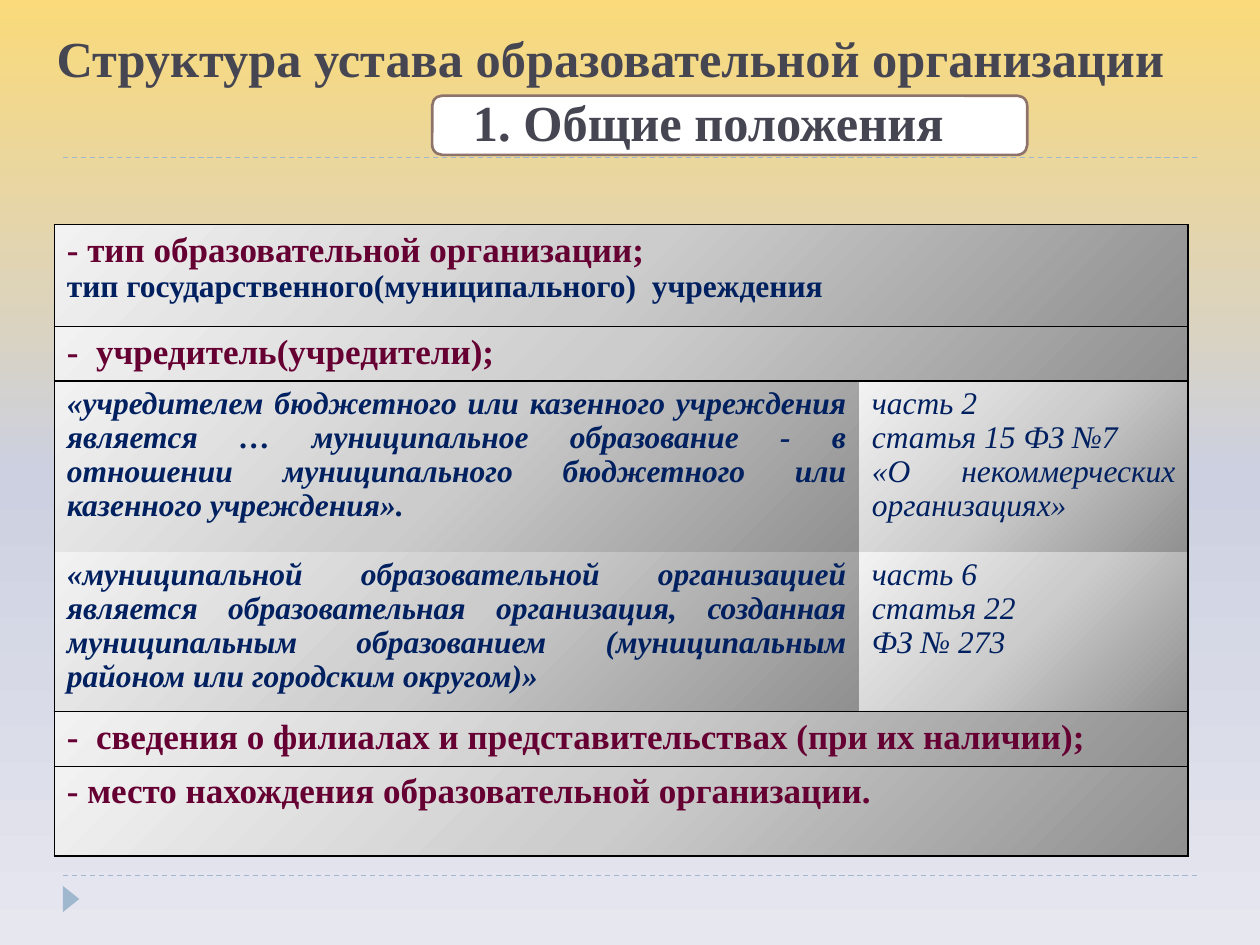
from dataclasses import dataclass

import lxml.etree
import pptx
import pptx.dml.color
import pptx.enum.dml
import pptx.enum.shapes
import pptx.enum.text
import pptx.oxml.ns
import pptx.util

Pt = pptx.util.Pt
qn = pptx.oxml.ns.qn
SHAPE = pptx.enum.shapes.MSO_SHAPE
ALIGN = pptx.enum.text.PP_ALIGN


@dataclass(frozen=True)
class Theme:
    font: str = "Times New Roman"
    title: str = "464653"
    item: str = "660033"
    detail: str = "002060"
    accent: str = "9FB8CD"
    badge: str = "FFFFFF"
    badge_line: str = "8E736A"
    border: str = "000000"
    sky: tuple[str, ...] = ("FADA7A", "CCD0E0", "E6E7EF")
    metal: tuple[str, ...] = ("909090", "CCCCCC", "F2F2F2")
    title_size: float = 28.8
    item_size: float = 20
    detail_size: float = 18


THEME = Theme()


@dataclass(frozen=True)
class Line:
    text: str
    size: float
    color: str
    bold: bool = True
    italic: bool = False
    justified: bool = False
    spacing: float = 1.0


@dataclass(frozen=True)
class Row:
    height: float
    cells: tuple[tuple[Line, ...], ...]
    borders: tuple[str, ...] = ("LRTB",)


def item(text: str) -> Line:
    return Line(text, THEME.item_size, THEME.item)


def detail(text: str) -> Line:
    return Line(text, THEME.detail_size, THEME.detail)


def quote(text: str, bold: bool = True) -> Line:
    return Line(text, THEME.detail_size, THEME.detail, bold, True, True, 0.97)


def law(*texts: str) -> tuple[Line, ...]:
    return tuple(quote(text, bold=False) for text in texts)


ROWS = (
    Row(58.3, ((item("- тип образовательной организации;"),
                detail("тип государственного(муниципального)  учреждения")),)),
    Row(29.3, ((item("-  учредитель(учредители);"),),)),
    Row(97.8, ((quote("«учредителем бюджетного или казенного учреждения является … "
                      "муниципальное образование - в отношении муниципального "
                      "бюджетного или казенного учреждения»."),),
               law("часть 2", "статья 15 ФЗ №7", "«О некоммерческих организациях»")),
        ("LT", "RT")),
    Row(89.2, ((quote("«муниципальной образовательной организацией является "
                      "образовательная организация, созданная муниципальным "
                      "образованием (муниципальным районом или городским округом)»"),),
               law("часть 6", "статья 22", "ФЗ № 273")),
        ("LB", "RB")),
    Row(29.3, ((item("-  сведения о филиалах и представительствах (при их наличии);"),),)),
    Row(51.4, ((item("- место нахождения образовательной организации."),),)),
)


def rgb(color: str) -> pptx.dml.color.RGBColor:
    return pptx.dml.color.RGBColor.from_string(color)


def node(parent, tag: str, **attributes: str):
    return lxml.etree.SubElement(parent, qn(tag), attributes)


def gradient(parent, colors: tuple[str, ...]):
    fill = node(parent, "a:gradFill", rotWithShape="1")
    stops = node(fill, "a:gsLst")
    for index, color in enumerate(colors):
        position = index * 100000 // (len(colors) - 1)
        node(node(stops, "a:gs", pos=str(position)), "a:srgbClr", val=color)
    return fill


def paint_background(slide) -> None:
    slide.background.fill.solid()
    properties = slide.element.find(".//" + qn("p:bgPr"))
    plain = properties.find(qn("a:solidFill"))
    sky = gradient(properties, THEME.sky)
    node(sky, "a:lin", ang="5400000", scaled="0")
    properties.replace(plain, sky)


def add_divider(slide, y: float) -> None:
    divider = slide.shapes.add_connector(
        pptx.enum.shapes.MSO_CONNECTOR.STRAIGHT, Pt(36), Pt(y), Pt(684), Pt(y))
    divider.line.color.rgb = rgb(THEME.accent)
    divider.line.width = Pt(0.75)
    divider.line.dash_style = pptx.enum.dml.MSO_LINE.DASH
    node(divider.element.spPr, "a:effectLst")


def add_filled(slide, kind, left: float, top: float, width: float, height: float,
               color: str):
    shape = slide.shapes.add_shape(kind, Pt(left), Pt(top), Pt(width), Pt(height))
    shape.shadow.inherit = False
    shape.fill.solid()
    shape.fill.fore_color.rgb = rgb(color)
    shape.line.fill.background()
    return shape


def write(frame, lines: tuple[Line, ...]) -> None:
    for index, line in enumerate(lines):
        paragraph = frame.paragraphs[0] if index == 0 else frame.add_paragraph()
        paragraph.text = line.text
        paragraph.alignment = ALIGN.JUSTIFY if line.justified else ALIGN.LEFT
        paragraph.line_spacing = line.spacing
        font = paragraph.font
        font.name = THEME.font
        font.size = Pt(line.size)
        font.bold = line.bold
        font.italic = line.italic
        font.color.rgb = rgb(line.color)


def add_title(slide) -> None:
    title = slide.shapes.add_textbox(Pt(25.2), Pt(12.2), Pt(663), Pt(77.8))
    frame = title.text_frame
    frame.word_wrap = True
    frame.vertical_anchor = pptx.enum.text.MSO_ANCHOR.BOTTOM
    write(frame, tuple(Line(text, THEME.title_size, THEME.title) for text in (
        "Структура устава образовательной организации", "1. Общие положения")))
    section = frame.paragraphs[1]
    section.space_before = Pt(1.7)
    section._p.get_or_add_pPr().set("marL", str(Pt(238)))


def style_cell(cell, borders: str) -> None:
    properties = cell._tc.get_or_add_tcPr()
    for side in "LRTB":
        edge = node(properties, f"a:ln{side}", w=str(Pt(1)))
        if side in borders:
            node(node(edge, "a:solidFill"), "a:srgbClr", val=THEME.border)
        else:
            node(edge, "a:noFill")
    glow = node(gradient(properties, THEME.metal), "a:path", path="circle")
    node(glow, "a:fillToRect", l="100000", t="100000")


def add_charter_table(slide) -> None:
    widths = (460, 188)
    table = slide.shapes.add_table(
        len(ROWS), len(widths), Pt(31), Pt(128.3), Pt(sum(widths)),
        Pt(sum(row.height for row in ROWS))).table
    table.first_row = False
    table.horz_banding = False
    for column, width in zip(table.columns, widths):
        column.width = Pt(width)
    for index, row in enumerate(ROWS):
        table.rows[index].height = Pt(row.height)
        if len(row.cells) == 1:
            table.cell(index, 0).merge(table.cell(index, 1))
        for column in range(len(widths)):
            style_cell(table.cell(index, column), row.borders[min(column, len(row.borders) - 1)])
        for column, lines in enumerate(row.cells):
            write(table.cell(index, column).text_frame, lines)


def main() -> None:
    deck = pptx.Presentation()
    deck.slide_width, deck.slide_height = Pt(720), Pt(540)
    slide = deck.slides.add_slide(deck.slide_layouts[6])
    paint_background(slide)
    for y in (500.4, 90):
        add_divider(slide, y)
    marker = add_filled(slide, SHAPE.ISOSCELES_TRIANGLE, 33.1, 509, 15, 9.4, THEME.accent)
    marker.rotation = 90
    badge = add_filled(slide, SHAPE.ROUNDED_RECTANGLE, 247, 54.7, 340, 33.8, THEME.badge)
    badge.line.color.rgb = rgb(THEME.badge_line)
    badge.line.width = Pt(1.5)
    add_title(slide)
    add_charter_table(slide)
    deck.save("out.pptx")


if __name__ == "__main__":
    main()
